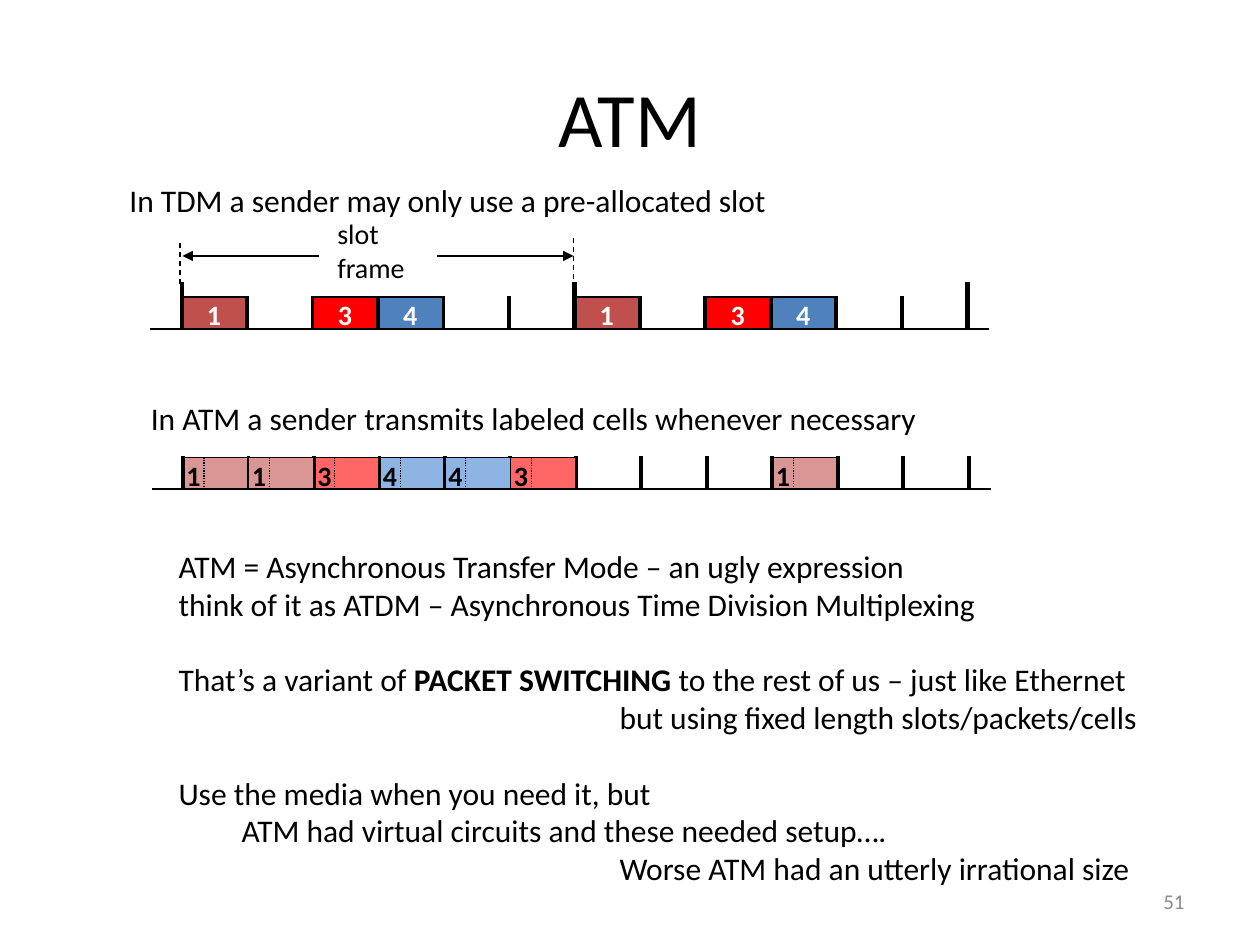
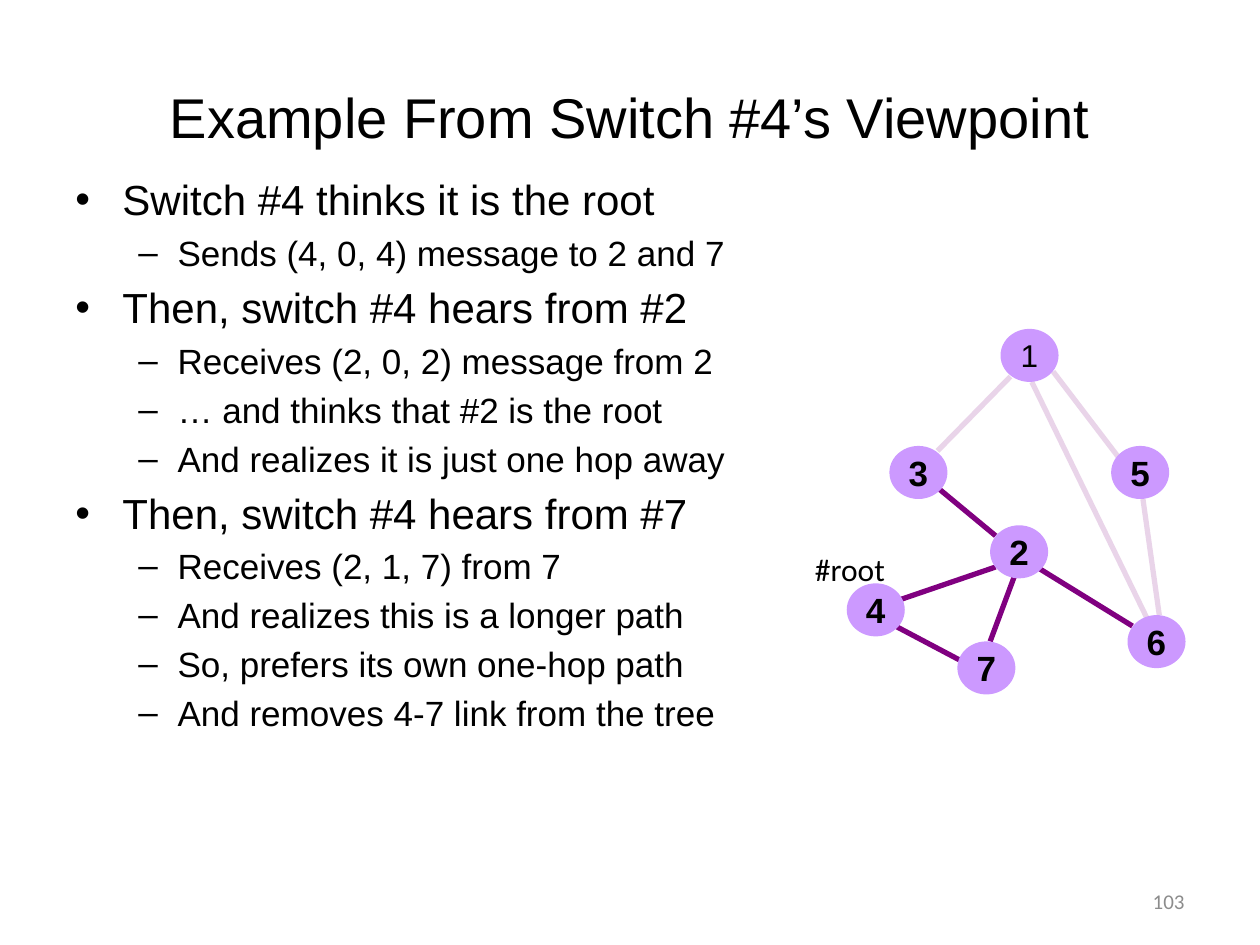
from dataclasses import dataclass

from lxml.etree import SubElement
from pptx import Presentation
from pptx.dml.color import RGBColor
from pptx.enum.dml import MSO_LINE
from pptx.enum.shapes import MSO_CONNECTOR, MSO_SHAPE
from pptx.enum.text import MSO_ANCHOR, PP_ALIGN
from pptx.oxml.ns import qn
from pptx.util import Cm, Pt

COLOURS = {
    "black": "000000", "white": "FFFFFF", "grey": "8C8C8C",
    "brick": "C0504D", "red": "FF0000", "blue": "4F81BD",
    "pale brick": "D99694", "pale red": "FF6666", "pale blue": "8EB4E3",
    "purple": "800080", "lilac": "CC99FF",
}
SLOT_WIDTH, SLOT_HEIGHT, SLOT_COUNT = 1.32, 0.64, 12


@dataclass(frozen=True)
class Cell:
    slot: int
    sender: str
    colour: str
    over_ticks: bool = False


@dataclass(frozen=True)
class Timeline:
    left: float
    axis: float
    cells: tuple[Cell, ...]
    label_shift: float
    label_top: float
    label_colour: str


@dataclass(frozen=True)
class Node:
    name: str
    left: float
    top: float
    size: int = 20
    bold: bool = True


@dataclass(frozen=True)
class Edge:
    start: tuple[float, float]
    end: tuple[float, float]
    opacity: int = 100


@dataclass(frozen=True)
class Line:
    """A paragraph; words between asterisks are bold."""
    text: str
    indent: float = 0
    gap: float = 0


TDM = Timeline(3.66, 6.63, (
    Cell(0, "1", "brick"), Cell(2, "3", "red"), Cell(3, "4", "blue"),
    Cell(6, "1", "brick"), Cell(8, "3", "red"), Cell(9, "4", "blue"),
), 0.26, 5.88, "white")

ATM = Timeline(3.69, 9.86, (
    Cell(0, "1", "pale brick"), Cell(2, "3", "pale red"),
    Cell(3, "4", "pale blue"), Cell(9, "1", "pale brick"),
    Cell(1, "1", "pale brick", True), Cell(4, "4", "pale blue", True),
    Cell(5, "3", "pale red", True),
), -0.18, 9.11, "black")

ATM_NOTES = (
    Line("ATM = Asynchronous Transfer Mode – an ugly expression"),
    Line("think of it as ATDM – Asynchronous Time Division Multiplexing"),
    Line("That’s a variant of *PACKET SWITCHING* to the rest of us"
         " – just like Ethernet", gap=21.6),
    Line("but using fixed length slots/packets/cells", indent=8.89),
    Line("Use the media when you need it, but", gap=21.6),
    Line("ATM had virtual circuits and these needed setup….", indent=1.27),
    Line("Worse ATM had an utterly irrational size", indent=8.89),
)

VIEWPOINT = {
    "Switch #4 thinks it is the root": (
        "Sends (4, 0, 4) message to 2 and 7",
    ),
    "Then, switch #4 hears from #2": (
        "Receives (2, 0, 2) message from 2",
        "… and thinks that #2 is the root",
        "And realizes it is just one hop away",
    ),
    "Then, switch #4 hears from #7": (
        "Receives (2, 1, 7) from 7",
        "And realizes this is a longer path",
        "So, prefers its own one-hop path",
        "And removes 4-7 link from the tree",
    ),
}

NODES = (
    Node("1", 20.17, 6.63, 18, False), Node("5", 22.4, 8.99),
    Node("7", 19.3, 12.93), Node("2", 19.96, 10.59),
    Node("4", 17.07, 11.76), Node("3", 17.93, 8.99),
    Node("6", 22.73, 12.4),
)

EDGES = (
    Edge((20.37, 7.59), (18.9, 9.09), 17),
    Edge((21.23, 7.49), (22.61, 9.3), 17),
    Edge((23.04, 10.06), (23.37, 12.4), 17),
    Edge((20.8, 7.7), (23.14, 12.5), 17),
    Edge((18.9, 9.83), (20.07, 10.8)),
    Edge((20.9, 11.43), (22.83, 12.62)),
    Edge((18.14, 12.09), (20.07, 11.43)),
    Edge((19.96, 12.93), (20.47, 11.56)),
    Edge((19.43, 13.35), (18.03, 12.61)),
)


def colour_of(name: str) -> RGBColor:
    return RGBColor.from_string(COLOURS[name])


# Text
def write(para, text: str, *, size: float = 18, font: str = "Calibri",
          colour: str = "black", bold: bool = False, align=PP_ALIGN.LEFT) -> None:
    """Add text to a paragraph; words between asterisks turn bold."""
    para.alignment = align
    for number, part in enumerate(text.split("*")):
        span = para.add_run()
        span.text = part
        span.font.size = Pt(size)
        span.font.name = font
        span.font.bold = bold or number % 2 == 1
        span.font.color.rgb = colour_of(colour)


def add_box(slide, left: float, top: float, width: float, height: float,
            *, wrap: bool = True, anchor=MSO_ANCHOR.TOP):
    box = slide.shapes.add_textbox(Cm(left), Cm(top), Cm(width), Cm(height))
    box.text_frame.word_wrap = wrap
    box.text_frame.vertical_anchor = anchor
    return box.text_frame


def next_para(frame):
    """Return the first paragraph while it is empty, then new ones."""
    first = frame.paragraphs[0]
    return frame.add_paragraph() if first.runs else first


def set_indent(para, left: float, first: float = 0):
    properties = para._p.get_or_add_pPr()
    properties.set("marL", str(Cm(left)))
    properties.set("indent", str(Cm(first)))
    return properties


def write_bullet(frame, text: str, mark: str, left: float, hang: float,
                 size: float) -> None:
    para = next_para(frame)
    properties = set_indent(para, left, -hang)
    spacing = SubElement(properties, qn("a:spcBef"))
    SubElement(spacing, qn("a:spcPct")).set("val", "20000")
    SubElement(properties, qn("a:buFont")).set("typeface", "Arial")
    SubElement(properties, qn("a:buChar")).set("char", mark)
    write(para, text, size=size, font="Arial")


# Lines and shapes
def add_line(slide, start: tuple[float, float], end: tuple[float, float], *,
             width: float = 0.75, colour: str = "black", dash=None,
             arrow: bool = False, opacity: int = 100) -> None:
    line = slide.shapes.add_connector(
        MSO_CONNECTOR.STRAIGHT, *(Cm(value) for value in start + end))
    line.line.width = Pt(width)
    line.line.color.rgb = colour_of(colour)
    if dash is not None:
        line.line.dash_style = dash
    properties = line._element.spPr
    if opacity < 100:
        paint = properties.find(".//" + qn("a:srgbClr"))
        SubElement(paint, qn("a:alpha")).set("val", str(opacity * 1000))
    if arrow:
        outline = line.line._get_or_add_ln()
        SubElement(outline, qn("a:tailEnd")).set("type", "triangle")
    SubElement(properties, qn("a:effectLst"))


def add_filled(slide, kind, left: float, top: float, width: float,
               height: float, colour: str):
    shape = slide.shapes.add_shape(kind, Cm(left), Cm(top), Cm(width), Cm(height))
    shape.shadow.inherit = False
    shape.fill.solid()
    shape.fill.fore_color.rgb = colour_of(colour)
    shape.line.fill.background()
    return shape


# Shared slide frame
def add_slide(deck, title: str, number: str, **title_format):
    slide = deck.slides.add_slide(deck.slide_layouts[5])
    heading = slide.shapes.title
    heading.left, heading.top = Cm(1.27), Cm(0.76)
    heading.width, heading.height = Cm(22.86), Cm(3.18)
    heading.text_frame.vertical_anchor = MSO_ANCHOR.MIDDLE
    write(heading.text_frame.paragraphs[0], title,
          align=PP_ALIGN.CENTER, **title_format)
    footer = add_box(slide, 18.21, 17.65, 5.92, 1.02, anchor=MSO_ANCHOR.MIDDLE)
    write(footer.paragraphs[0], number, size=12, colour="grey",
          align=PP_ALIGN.RIGHT)
    return slide


# Timelines
def slot_left(timeline: Timeline, slot: int) -> float:
    return timeline.left + slot * SLOT_WIDTH


def add_cells(slide, timeline: Timeline, over_ticks: bool) -> None:
    for cell in timeline.cells:
        if cell.over_ticks == over_ticks:
            block = add_filled(slide, MSO_SHAPE.RECTANGLE,
                               slot_left(timeline, cell.slot),
                               timeline.axis - SLOT_HEIGHT,
                               SLOT_WIDTH, SLOT_HEIGHT, cell.colour)
            block.line.color.rgb = colour_of("black")
            block.line.width = Pt(0.75)


def add_timeline(slide, timeline: Timeline,
                 frame_ticks: dict[int, float]) -> None:
    """Draw axis, cells, ticks and labels; frame_ticks gives tall tick widths."""
    axis = timeline.axis
    add_line(slide, (timeline.left - 0.63, axis), (timeline.left + 16.28, axis))
    add_cells(slide, timeline, over_ticks=False)
    for slot in range(SLOT_COUNT + 1):
        left = slot_left(timeline, slot)
        height = 0.95 if slot in frame_ticks else 0.66
        add_line(slide, (left, axis - height), (left, axis),
                 width=frame_ticks.get(slot, 2.25))
    add_cells(slide, timeline, over_ticks=True)
    for cell in timeline.cells:
        label = add_box(slide, slot_left(timeline, cell.slot) + timeline.label_shift,
                        timeline.label_top, 0.84, 0.94, wrap=False)
        write(label.paragraphs[0], cell.sender, size=16, bold=True,
              colour=timeline.label_colour)


def build_atm_slide(deck) -> None:
    slide = add_slide(deck, "ATM", "51", size=44)
    for text, left, top, width in (
        ("In TDM a sender may only use a pre-allocated slot", 2.36, 3.53, 15.57),
        ("In ATM a sender transmits labeled cells whenever necessary",
         2.79, 7.92, 16.74),
    ):
        write(add_box(slide, left, top, width, 1.02).paragraphs[0], text)

    # Slot frame and its extent
    add_timeline(slide, TDM, {0: 2.25, 6: 3, 12: 3})
    caption = add_box(slide, 6.55, 4.24, 1.98, 1.63)
    for word in ("slot", "frame"):
        write(next_para(caption), word, size=16)
    add_line(slide, (8.81, 5.16), (11.56, 5.16), arrow=True)
    add_line(slide, (6.43, 5.16), (3.68, 5.16), arrow=True)
    add_line(slide, (3.63, 4.9), (3.63, 5.77), dash=MSO_LINE.DASH)
    add_line(slide, (11.56, 4.8), (11.56, 5.64), dash=MSO_LINE.DASH)

    # Labeled cells, each with a dotted header edge
    add_timeline(slide, ATM, {})
    for cell in ATM.cells:
        left = slot_left(ATM, cell.slot) + 0.42
        add_line(slide, (left, ATM.axis - SLOT_HEIGHT), (left, ATM.axis),
                 dash=MSO_LINE.ROUND_DOT)

    notes = add_box(slide, 3.35, 10.9, 21.82, 7.19)
    for line in ATM_NOTES:
        para = next_para(notes)
        set_indent(para, line.indent)
        para.space_before = Pt(line.gap)
        write(para, line.text)


def build_viewpoint_slide(deck) -> None:
    slide = add_slide(deck, "Example From Switch #4’s Viewpoint", "103",
                      size=32, font="Arial")
    body = add_box(slide, 1.27, 3.38, 15.49, 15.24)
    for point, details in VIEWPOINT.items():
        write_bullet(body, point, "•", 0.95, 0.95, 24)
        for detail in details:
            write_bullet(body, detail, "–", 2.06, 0.79, 20)

    # Switch network
    for edge in EDGES:
        add_line(slide, edge.start, edge.end, width=3, colour="purple",
                 opacity=edge.opacity)
    for node in NODES:
        oval = add_filled(slide, MSO_SHAPE.OVAL, node.left, node.top,
                          1.17, 1.07, "lilac")
        oval.text_frame.word_wrap = False
        oval.text_frame.vertical_anchor = MSO_ANCHOR.MIDDLE
        write(oval.text_frame.paragraphs[0], node.name, size=node.size,
              font="Arial", bold=node.bold, align=PP_ALIGN.CENTER)
    root = add_box(slide, 16.18, 10.97, 2.06, 1.02)
    write(root.paragraphs[0], "#root")


def main() -> None:
    deck = Presentation()
    deck.slide_width, deck.slide_height = Cm(25.4), Cm(19.05)
    build_atm_slide(deck)
    build_viewpoint_slide(deck)
    deck.save("out.pptx")


if __name__ == "__main__":
    main()
